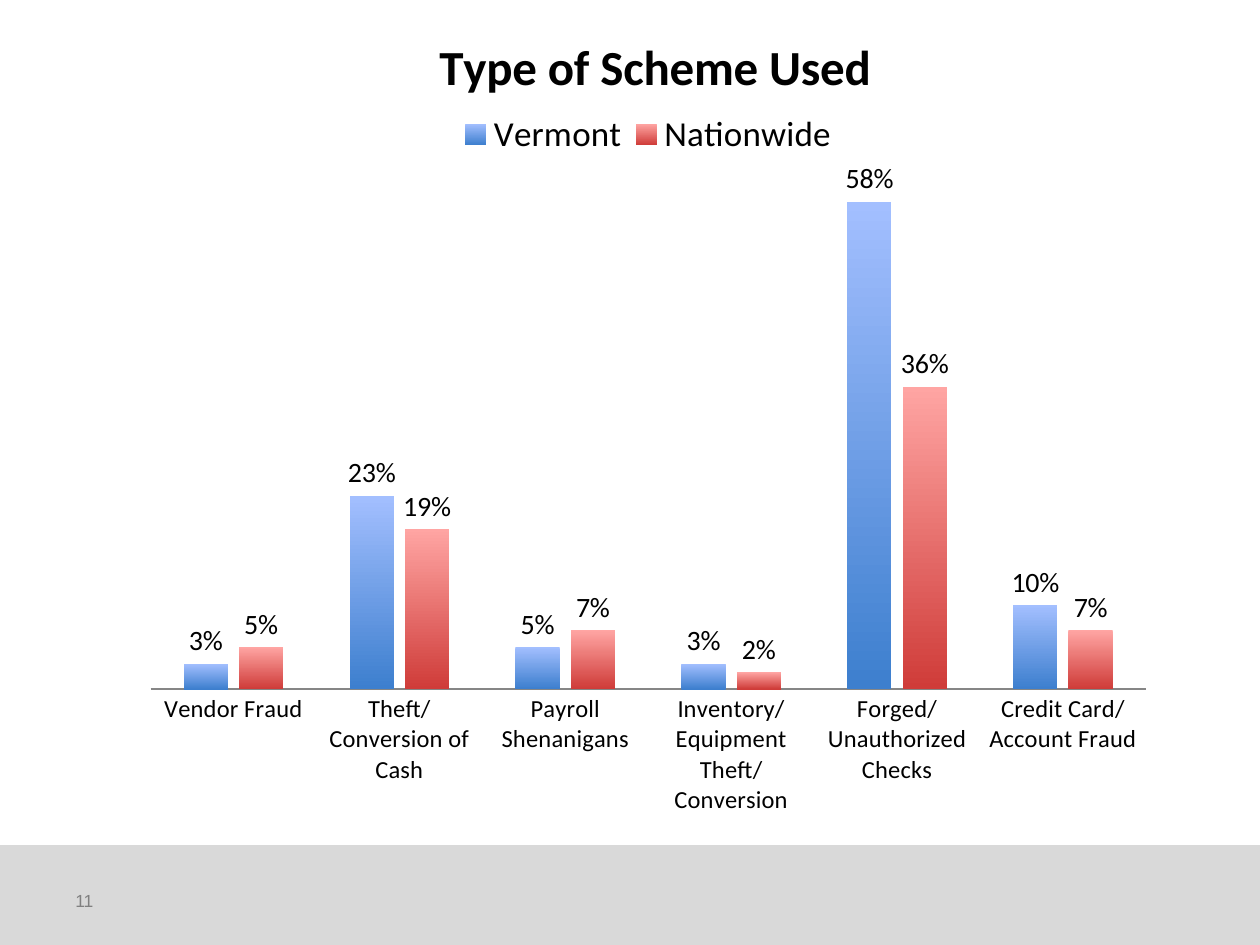
from lxml import etree
from pptx import Presentation
from pptx.chart.data import CategoryChartData
from pptx.dml.color import RGBColor
from pptx.enum.chart import (XL_CHART_TYPE, XL_LABEL_POSITION, XL_LEGEND_POSITION,
                             XL_TICK_MARK)
from pptx.enum.shapes import MSO_SHAPE
from pptx.enum.text import MSO_ANCHOR
from pptx.oxml.ns import qn
from pptx.util import Inches, Pt

CLUSTERED = XL_CHART_TYPE.COLUMN_CLUSTERED
OUTSIDE_END = XL_LABEL_POSITION.OUTSIDE_END
LEGEND_TOP = XL_LEGEND_POSITION.TOP
NO_TICKS = XL_TICK_MARK.NONE
RECTANGLE = MSO_SHAPE.RECTANGLE
MIDDLE = MSO_ANCHOR.MIDDLE

COLORS = {"text": "000000", "footer": "D9D9D9", "number": "808080", "axis": "868686"}
GRADIENTS = {"Vermont": ("A3BFFF", "3D7FCE"), "Nationwide": ("FFA5A3", "CF3C39")}
SCHEMES = {
    "Vendor Fraud": (0.03, 0.05),
    "Theft/Conversion of Cash": (0.23, 0.19),
    "Payroll Shenanigans": (0.05, 0.07),
    "Inventory/Equipment Theft/Conversion": (0.03, 0.02),
    "Forged/Unauthorized Checks": (0.58, 0.36),
    "Credit Card/Account Fraud": (0.10, 0.07),
}


def rgb(value):
    """Return the colour for a hex string."""
    return RGBColor.from_string(value)


def style_font(font, size, name="Calibri", color=COLORS["text"], bold=False):
    """Set size, typeface, colour and weight of a font."""
    font.size = Pt(size)
    font.name = name
    font.bold = bold
    font.color.rgb = rgb(color)


def place_part(chart, part, index, **settings):
    """Give a chart part a manual layout as fractions of the chart."""
    element = chart._chartSpace.xpath(f"c:chart/c:{part}")[0]
    for automatic in element.findall(qn("c:layout")):
        element.remove(automatic)
    layout = etree.Element(qn("c:layout"))
    manual = etree.SubElement(layout, qn("c:manualLayout"))
    for tag, value in settings.items():
        etree.SubElement(manual, qn(f"c:{tag}")).set("val", str(value))
    element.insert(index, layout)


def add_footer(slide, left, top, width, height):
    """Draw the footer band with the slide number."""
    band = slide.shapes.add_shape(RECTANGLE, left, top, width, height)
    band.shadow.inherit = False
    band.fill.solid()
    band.fill.fore_color.rgb = rgb(COLORS["footer"])
    band.line.color.rgb = rgb(COLORS["footer"])
    band.line.width = Pt(0.75)

    number = slide.shapes.add_textbox(left + Inches(0.5), top + Inches(0.24),
                                      Inches(2.33), Inches(0.4)).text_frame
    number.word_wrap = True
    number.vertical_anchor = MIDDLE
    number.text = "11"
    style_font(number.paragraphs[0].font, 10, "Arial", COLORS["number"])


def style_series(series):
    """Fill a series with its gradient and label its columns."""
    fill = series.format.fill
    fill.gradient()
    fill.gradient_angle = 270
    for stop, position, color in zip(fill.gradient_stops, (0, 1), GRADIENTS[series.name]):
        stop.position = position
        stop.color.rgb = rgb(color)
    labels = series.data_labels
    labels.show_value = True
    labels.number_format = "0%"
    labels.number_format_is_linked = False
    labels.position = OUTSIDE_END
    style_font(labels.font, 16)


def add_scheme_chart(slide, left, top, width, height):
    """Add the column chart of fraud schemes."""
    data = CategoryChartData(number_format="0%")
    data.categories = list(SCHEMES)
    for name, shares in zip(GRADIENTS, zip(*SCHEMES.values())):
        data.add_series(name, shares)
    chart = slide.shapes.add_chart(CLUSTERED, left, top, width, height, data).chart
    style_font(chart.font, 10)

    chart.has_title = True
    heading = chart.chart_title.text_frame
    heading.text = "Type of Scheme Used"
    style_font(heading.paragraphs[0].font, 28, bold=True)

    chart.has_legend = True
    chart.legend.position = LEGEND_TOP
    chart.legend.include_in_layout = False
    style_font(chart.legend.font, 20)

    scheme_axis = chart.category_axis
    scheme_axis.major_tick_mark = NO_TICKS
    scheme_axis.format.line.color.rgb = rgb(COLORS["axis"])
    style_font(scheme_axis.tick_labels.font, 14)

    share_axis = chart.value_axis
    share_axis.minimum_scale = 0
    share_axis.maximum_scale = 0.7
    share_axis.has_major_gridlines = False
    share_axis.visible = False

    plot = chart.plots[0]
    plot.gap_width = 150
    plot.overlap = -25
    plot.vary_by_categories = False
    for series in plot.series:
        style_series(series)

    place_part(chart, "title", 1, xMode="edge", yMode="edge", x=0.29, y=0.03)
    place_part(chart, "legend", 1, xMode="edge", yMode="edge",
               x=0.31, y=0.13, w=0.38, h=0.06)
    place_part(chart, "plotArea", 0, layoutTarget="inner", xMode="edge", yMode="edge",
               x=0.02, y=0.12, w=0.96, h=0.7)


def main():
    """Build and save the slide."""
    presentation = Presentation()
    presentation.slide_width = Inches(10)
    presentation.slide_height = Inches(7.5)
    slide = presentation.slides.add_slide(presentation.slide_layouts[6])
    add_footer(slide, Inches(0), Inches(6.71), Inches(10), Inches(0.79))
    add_scheme_chart(slide, Inches(1.03), Inches(0), Inches(8.23), Inches(6.67))
    presentation.save("out.pptx")


if __name__ == "__main__":
    main()
